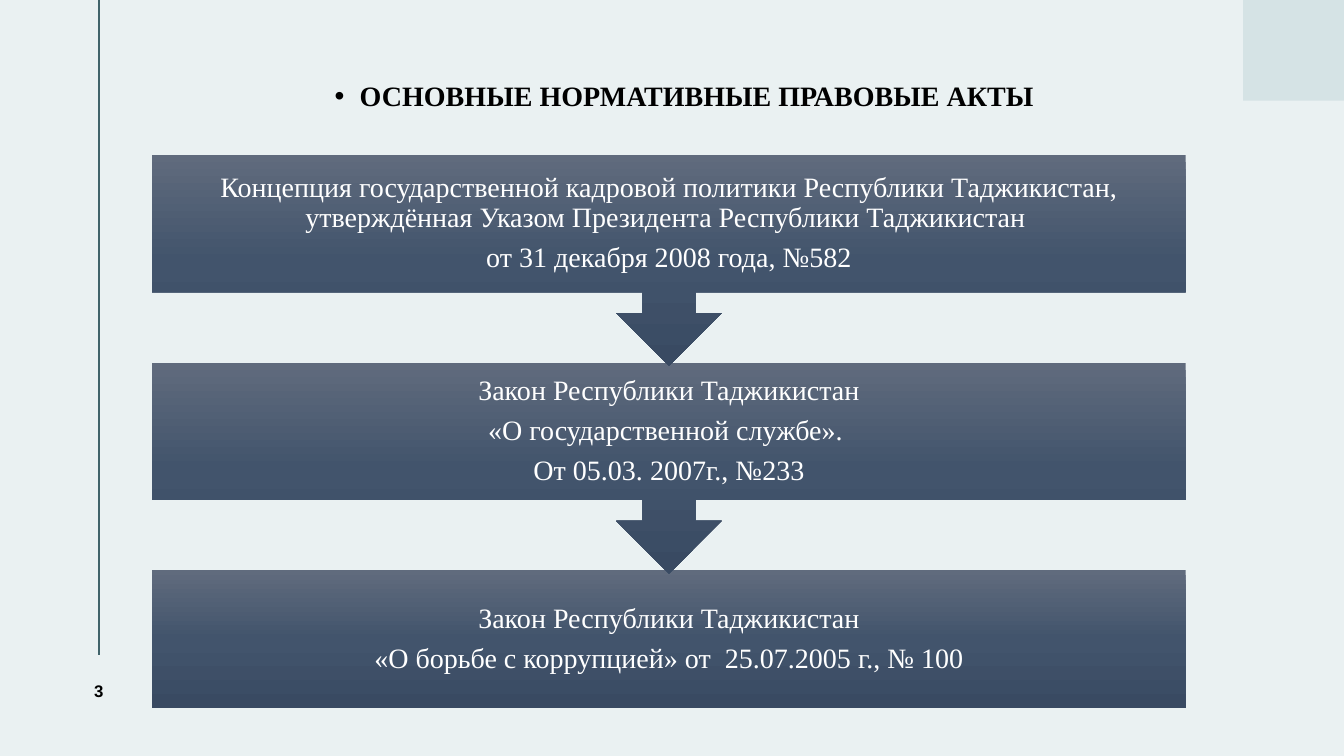
from copy import deepcopy

from lxml.etree import SubElement
from pptx import Presentation
from pptx.dml.color import RGBColor
from pptx.enum.shapes import MSO_CONNECTOR as Connector, MSO_SHAPE as Shape
from pptx.enum.text import MSO_ANCHOR as Anchor, MSO_AUTO_SIZE as AutoSize, PP_ALIGN as Align
from pptx.oxml.ns import qn
from pptx.util import Pt

COLORS = {
    "background": "EAF1F2",
    "line": "40636A",
    "corner": "D5E3E5",
    "box_top": "606B7D",
    "box_middle": "42546C",
    "box_bottom": "394A62",
    "text": "000000",
    "box_text": "FFFFFF",
}
SERIF, SANS = "Times New Roman", "Arial"
EMU_PER_PX = 9144

HEADING = "ОСНОВНЫЕ НОРМАТИВНЫЕ ПРАВОВЫЕ АКТЫ"
ACTS = [
    ["Концепция государственной кадровой политики Республики Таджикистан, "
     "утверждённая Указом Президента Республики Таджикистан ",
     "от 31 декабря 2008 года, №582"],
    ["Закон Республики Таджикистан",
     "«О государственной службе». ",
     "От 05.03. 2007г., №233"],
    ["Закон Республики Таджикистан",
     "«О борьбе с коррупцией» от  25.07.2005 г., № 100"],
]
ACT_LEFT, ACT_TOP, ACT_WIDTH, ACT_PITCH = 151, 154, 1025, 206
BOX_HEIGHT, CALLOUT_HEIGHT = 136, 209


def px(*lengths):
    return [length * EMU_PER_PX for length in lengths]


def rgb(name):
    return RGBColor.from_string(COLORS[name])


class SlideBuilder:
    """Hold the deck style and the current slide, and add elements to it."""

    def __init__(self, width, height):
        self.presentation = Presentation()
        self.presentation.slide_width, self.presentation.slide_height = px(width, height)
        self.slide = self.presentation.slides.add_slide(self.presentation.slide_layouts[1])
        title = self.slide.shapes.title.element
        title.getparent().remove(title)
        background = self.slide.background.fill
        background.solid()
        background.fore_color.rgb = rgb("background")

    def line(self, x1, y1, x2, y2):
        line = self.slide.shapes.add_connector(Connector.STRAIGHT, *px(x1, y1, x2, y2))
        line.line.color.rgb = rgb("line")
        line.line.width = Pt(1.5)
        SubElement(line.element.spPr, qn("a:effectLst"))

    def shape(self, kind, *box):
        shape = self.slide.shapes.add_shape(kind, *px(*box))
        shape.shadow.inherit = False
        shape.line.fill.background()
        return shape

    def corner(self, *box):
        fill = self.shape(Shape.RECTANGLE, *box).fill
        fill.solid()
        fill.fore_color.rgb = rgb("corner")

    def frame(self, shape, margins):
        frame = shape.text_frame
        frame.word_wrap = True
        frame.auto_size = AutoSize.NONE
        frame.vertical_anchor = Anchor.MIDDLE
        (frame.margin_left, frame.margin_top,
         frame.margin_right, frame.margin_bottom) = px(*margins)
        return frame

    def run(self, paragraph, text, size, font, color, bold=False):
        paragraph.alignment = Align.CENTER
        run = paragraph.add_run()
        run.text = text
        run.font.size = Pt(size)
        run.font.name = font
        run.font.bold = bold
        run.font.color.rgb = rgb(color)
        return run

    def heading(self, text, *box):
        body = self.slide.placeholders[1]
        body.left, body.top, body.width, body.height = px(*box)
        paragraph = self.frame(body, (0, 0, 0, 31)).paragraphs[0]
        paragraph.space_before = Pt(0)
        self.run(paragraph, text, 20, SERIF, "text", bold=True)
        properties = paragraph._p.get_or_add_pPr()
        indent = 25 * EMU_PER_PX
        properties.set("marL", str(indent))
        properties.set("indent", str(-indent))
        SubElement(properties, qn("a:buFont"), typeface=SANS)
        SubElement(properties, qn("a:buChar"), char="•")

    def page_number(self, text, *box):
        number = self.slide.shapes.add_textbox(*px(*box))
        paragraph = self.frame(number, (10, 5, 10, 5)).paragraphs[0]
        run = self.run(paragraph, text, 12, SANS, "text", bold=True)
        run.font._element.set("spc", "150")

    def act(self, kind, lines, *box):
        shape = self.shape(kind, *box)
        shape.fill.gradient()
        shape.fill.gradient_angle = 270
        stop_list = shape.element.spPr.find(".//" + qn("a:gsLst"))
        stop_list.append(deepcopy(stop_list[0]))
        names = ("box_top", "box_middle", "box_bottom")
        for index, (stop, name) in enumerate(zip(shape.fill.gradient_stops, names)):
            stop.position = index / 2
            stop.color.rgb = rgb(name)
        frame = self.frame(shape, (16, 16, 16, 16))
        for index, text in enumerate(lines):
            paragraph = frame.add_paragraph() if index else frame.paragraphs[0]
            paragraph.line_spacing = 0.9
            paragraph.space_after = Pt(7)
            self.run(paragraph, text, 20, SERIF, "box_text")


def main():
    builder = SlideBuilder(1333, 750)
    builder.line(98, 0, 98, 650)
    builder.corner(1233, 0, 100, 100)
    builder.heading(HEADING, 256, 67, 845, 87)
    builder.page_number("3", 45, 650, 106, 71)
    last = len(ACTS) - 1
    for index in range(last, -1, -1):
        kind, height = ((Shape.RECTANGLE, BOX_HEIGHT) if index == last
                        else (Shape.DOWN_ARROW_CALLOUT, CALLOUT_HEIGHT))
        builder.act(kind, ACTS[index], ACT_LEFT, ACT_TOP + index * ACT_PITCH, ACT_WIDTH, height)
    builder.presentation.save("out.pptx")


if __name__ == "__main__":
    main()
